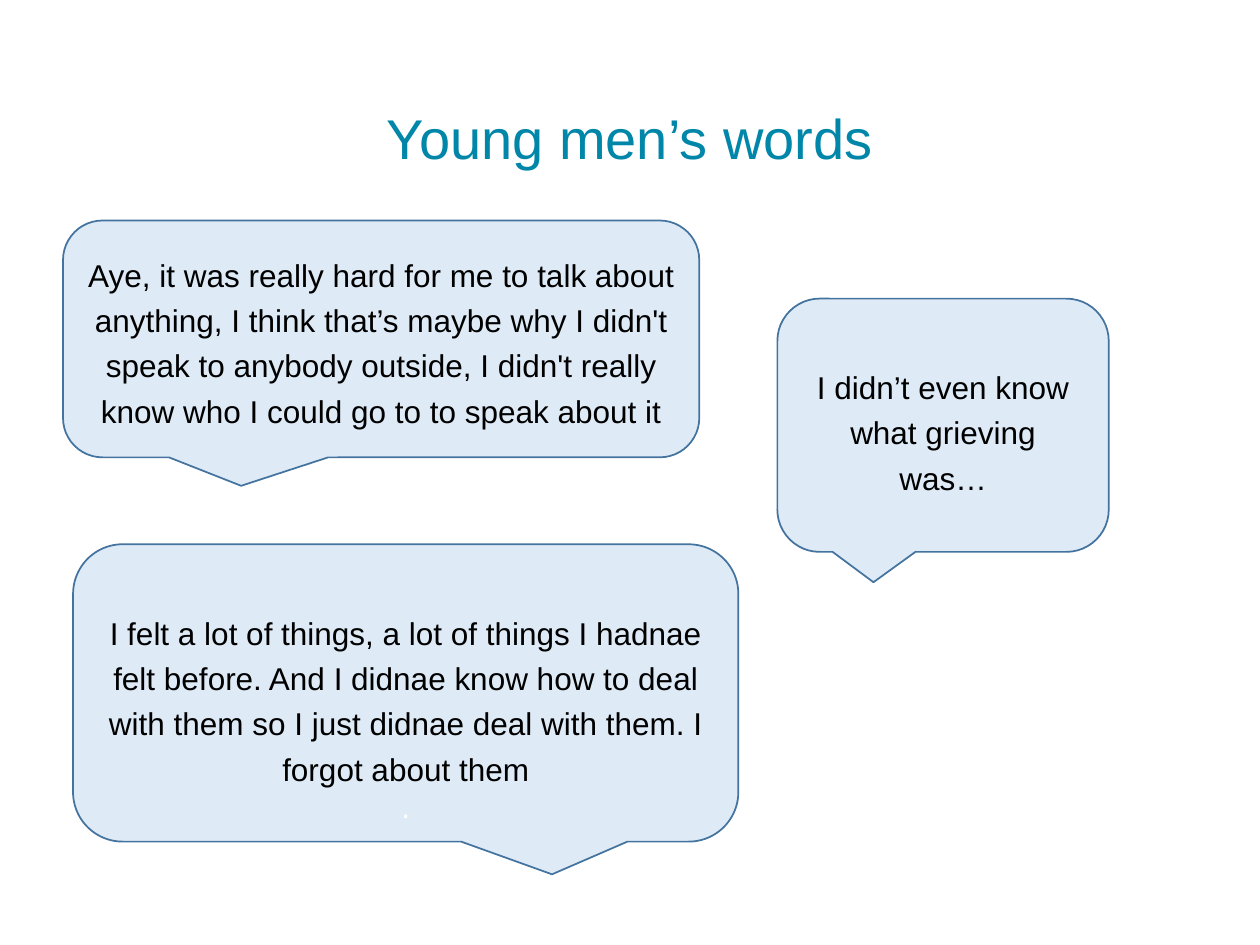
from pptx import Presentation
from pptx.dml.color import RGBColor
from pptx.enum.shapes import MSO_SHAPE
from pptx.enum.text import MSO_ANCHOR, PP_ALIGN
from pptx.util import Inches, Pt

CALLOUT = MSO_SHAPE.ROUNDED_RECTANGULAR_CALLOUT
MIDDLE = MSO_ANCHOR.MIDDLE
CENTER = PP_ALIGN.CENTER

TITLE_ONLY = 5
FONT = "Arial"
CORNER = 0.167
COLORS = {
    "title": "0086A8",
    "bubble": "DEEBF7",
    "outline": "43739E",
    "quote": "000000",
    "stop": "FFFFFF",
}

# Each quote: place in inches, tail tip as shares of the bubble, top inset,
# and paragraphs with colour name and line spacing.
QUOTES = [
    ((0.5, 1.75, 5.05, 1.88), (-0.22, 0.62), 0.05, [
        ("Aye, it was really hard for me to talk about anything, I think "
         "that’s maybe why I didn't speak to anybody outside, I didn't really "
         "know who I could go to to speak about it", "quote", 1.2)]),
    ((6.17, 2.37, 2.63, 2.01), (-0.21, 0.62), 0.1, [
        ("I didn’t even know what grieving was…", "quote", 1.2)]),
    ((0.58, 4.32, 5.28, 2.36), (0.22, 0.61), 0.41, [
        ("I felt a lot of things, a lot of things I hadnae felt before. And I "
         "didnae know how to deal with them so I just didnae deal with them. "
         "I forgot about them", "quote", 1.2),
        (".", "stop", 1.0)]),
]


def color(name):
    return RGBColor.from_string(COLORS[name])


def format_paragraph(para, size, color_name, spacing):
    para.alignment = CENTER
    para.line_spacing = spacing
    for span in para.runs:
        span.font.name = FONT
        span.font.size = Pt(size)
        span.font.color.rgb = color(color_name)


def set_title(page, text):
    title = page.shapes.title
    title.left, title.top = Inches(0.69), Inches(0.4)
    title.width, title.height = Inches(8.62), Inches(1.45)
    title.text_frame.text = text
    title.text_frame.vertical_anchor = MIDDLE
    format_paragraph(title.text_frame.paragraphs[0], 32, "title", 0.9)


def add_quote(page, place, tail, top_inset, paragraphs):
    bubble = page.shapes.add_shape(CALLOUT, *map(Inches, place))
    for index, share in enumerate((*tail, CORNER)):
        bubble.adjustments[index] = share
    bubble.shadow.inherit = False
    bubble.fill.solid()
    bubble.fill.fore_color.rgb = color("bubble")
    bubble.line.color.rgb = color("outline")
    bubble.line.width = Pt(1)

    frame = bubble.text_frame
    frame.word_wrap = True
    frame.vertical_anchor = MIDDLE
    frame.margin_top = Inches(top_inset)
    frame.text = "\n".join(text for text, _, _ in paragraphs)
    for para, (_, color_name, spacing) in zip(frame.paragraphs, paragraphs):
        format_paragraph(para, 18, color_name, spacing)


def main():
    deck = Presentation()
    deck.slide_width, deck.slide_height = Inches(10), Inches(7.5)
    page = deck.slides.add_slide(deck.slide_layouts[TITLE_ONLY])
    set_title(page, "Young men’s words")
    for quote in QUOTES:
        add_quote(page, *quote)
    deck.save("out.pptx")


if __name__ == "__main__":
    main()
